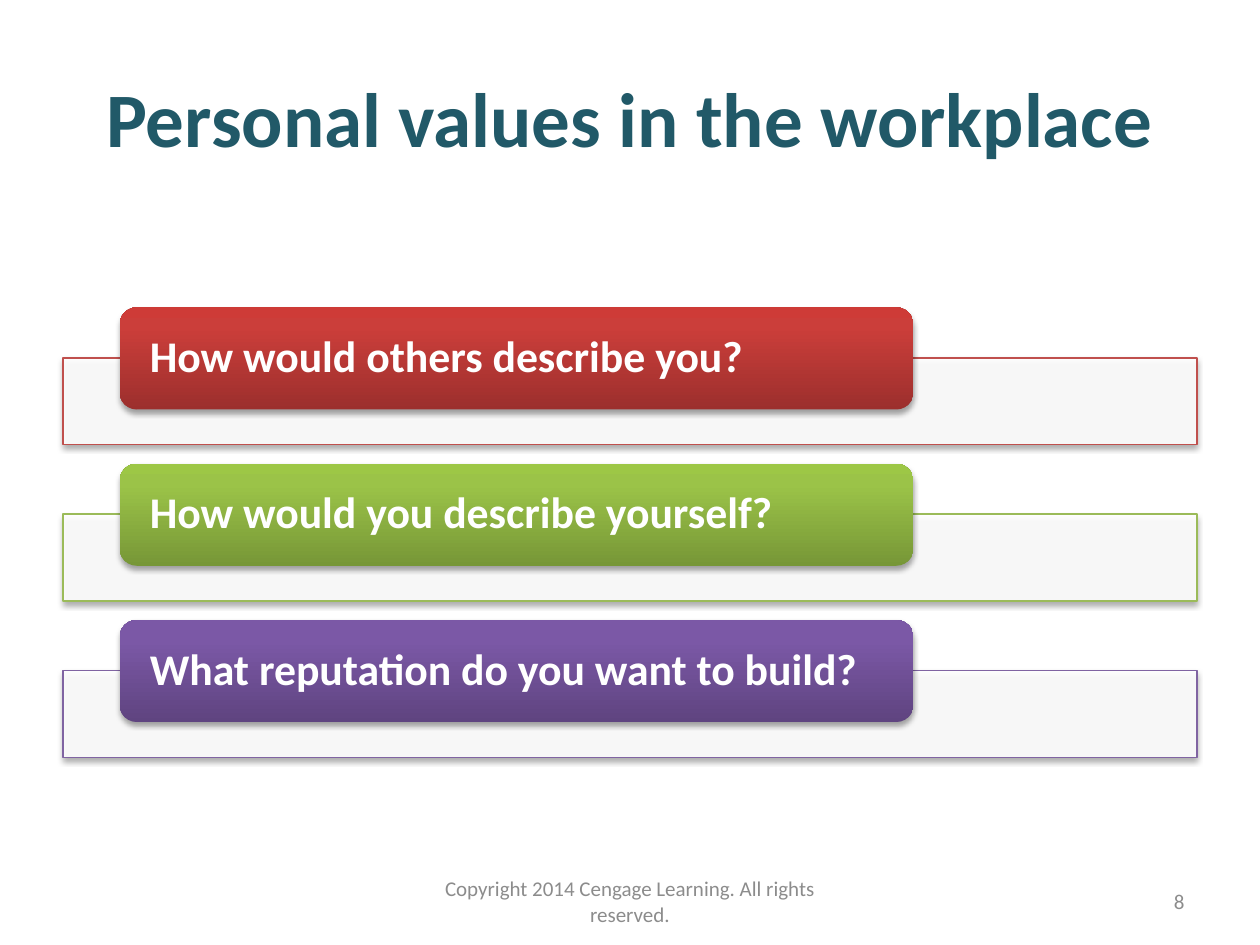
from lxml.etree import SubElement
from pptx import Presentation
from pptx.dml.color import RGBColor
from pptx.enum.shapes import MSO_SHAPE
from pptx.enum.text import MSO_ANCHOR, PP_ALIGN
from pptx.oxml.ns import qn
from pptx.util import Pt

# Content: question, frame colour, gradient from bottom to top
TITLE = "Personal values in the workplace"
ROWS = [
    ("How would others describe you?", "C0504D", ("9C2F2D", "CB3E3A", "CE3B37")),
    ("How would you describe yourself?", "9BBB59", ("779737", "9BC348", "9DC746")),
    ("What reputation do you want to build?", "8064A2", ("5F4480", "7B58A6", "7C57A8")),
]
NOTICE = "Copyright 2014 Cengage Learning. All rights reserved."
NUMBER = "8"

THEME = {
    "font": "Calibri",
    "title": ("215968", 44, True),
    "label": ("FFFFFF", 25, True),
    "foot": ("8C8C8C", 12, False),
    "panel": "FFFFFF",
    "shadow": "000000",
}
STOPS = (0, 80, 100)

# Layout in points
EDGE, WIDE = 36, 648
TOP, STEP = 175.7, 89.28
TAB_X, TAB_W, TAB_H = 68.4, 453.6, 58.3
DROP, BAR_H = 28.8, 49.7
FOOT_Y, FOOT_H = 500.5, 28.8


def write(shape, text, style, align=PP_ALIGN.LEFT):
    color, size, bold = THEME[style]
    frame = shape.text_frame
    frame.word_wrap = True
    frame.vertical_anchor = MSO_ANCHOR.MIDDLE
    para = frame.paragraphs[0]
    para.alignment = align
    run = para.add_run()
    run.text = text
    font = run.font
    font.name, font.size, font.bold = THEME["font"], Pt(size), bold
    font.color.rgb = RGBColor.from_string(color)
    return frame


def add_text(slide, box, text, style, align):
    write(slide.shapes.add_textbox(*map(Pt, box)), text, style, align)


def add_color(parent, color, alpha=None):
    node = SubElement(parent, qn("a:srgbClr"), val=color)
    if alpha is not None:
        SubElement(node, qn("a:alpha"), val=str(alpha * 1000))


def add_shadow(shape):
    shape.shadow.inherit = False
    effects = shape._element.spPr.find(qn("a:effectLst"))
    outer = SubElement(effects, qn("a:outerShdw"), blurRad=str(Pt(3.1)),
                       dist=str(Pt(1.8)), dir="5400000", rotWithShape="0")
    add_color(outer, THEME["shadow"], 35)


def add_bar(slide, y, color):
    bar = slide.shapes.add_shape(
        MSO_SHAPE.RECTANGLE, Pt(EDGE), Pt(y), Pt(WIDE), Pt(BAR_H))
    bar.fill.solid()
    bar.fill.fore_color.rgb = RGBColor.from_string(THEME["panel"])
    tint = bar._element.spPr.find(qn("a:solidFill"))[0]
    SubElement(tint, qn("a:alpha"), val="90000")
    bar.line.color.rgb = RGBColor.from_string(color)
    bar.line.width = Pt(0.75)
    add_shadow(bar)


def add_tab(slide, y, text, colors):
    tab = slide.shapes.add_shape(
        MSO_SHAPE.ROUNDED_RECTANGLE, Pt(TAB_X), Pt(y), Pt(TAB_W), Pt(TAB_H))
    tab.fill.gradient()
    tab.fill.gradient_angle = 90
    stops = tab._element.spPr.find(qn("a:gradFill")).find(qn("a:gsLst"))
    stops.clear()
    for pos, color in zip(STOPS, colors):
        add_color(SubElement(stops, qn("a:gs"), pos=str(pos * 1000)), color)
    tab.line.fill.background()
    add_shadow(tab)
    frame = write(tab, text, "label")
    frame.margin_left = frame.margin_right = Pt(14.4)
    frame.margin_top = frame.margin_bottom = 0
    frame.paragraphs[0].line_spacing = 0.9


def main():
    deck = Presentation()
    deck.slide_width, deck.slide_height = Pt(720), Pt(540)
    slide = deck.slides.add_slide(deck.slide_layouts[6])

    # Title
    add_text(slide, (EDGE, 21.6, WIDE, 90), TITLE, "title", PP_ALIGN.CENTER)

    # Question rows
    for i, (text, color, shades) in enumerate(ROWS):
        y = TOP + i * STEP
        add_bar(slide, y + DROP, color)
        add_tab(slide, y, text, shades)

    # Footer
    add_text(slide, (516, FOOT_Y, 168, FOOT_H), NUMBER, "foot", PP_ALIGN.RIGHT)
    add_text(slide, (246, FOOT_Y, 228, FOOT_H), NOTICE, "foot", PP_ALIGN.CENTER)

    deck.save("out.pptx")


if __name__ == "__main__":
    main()
